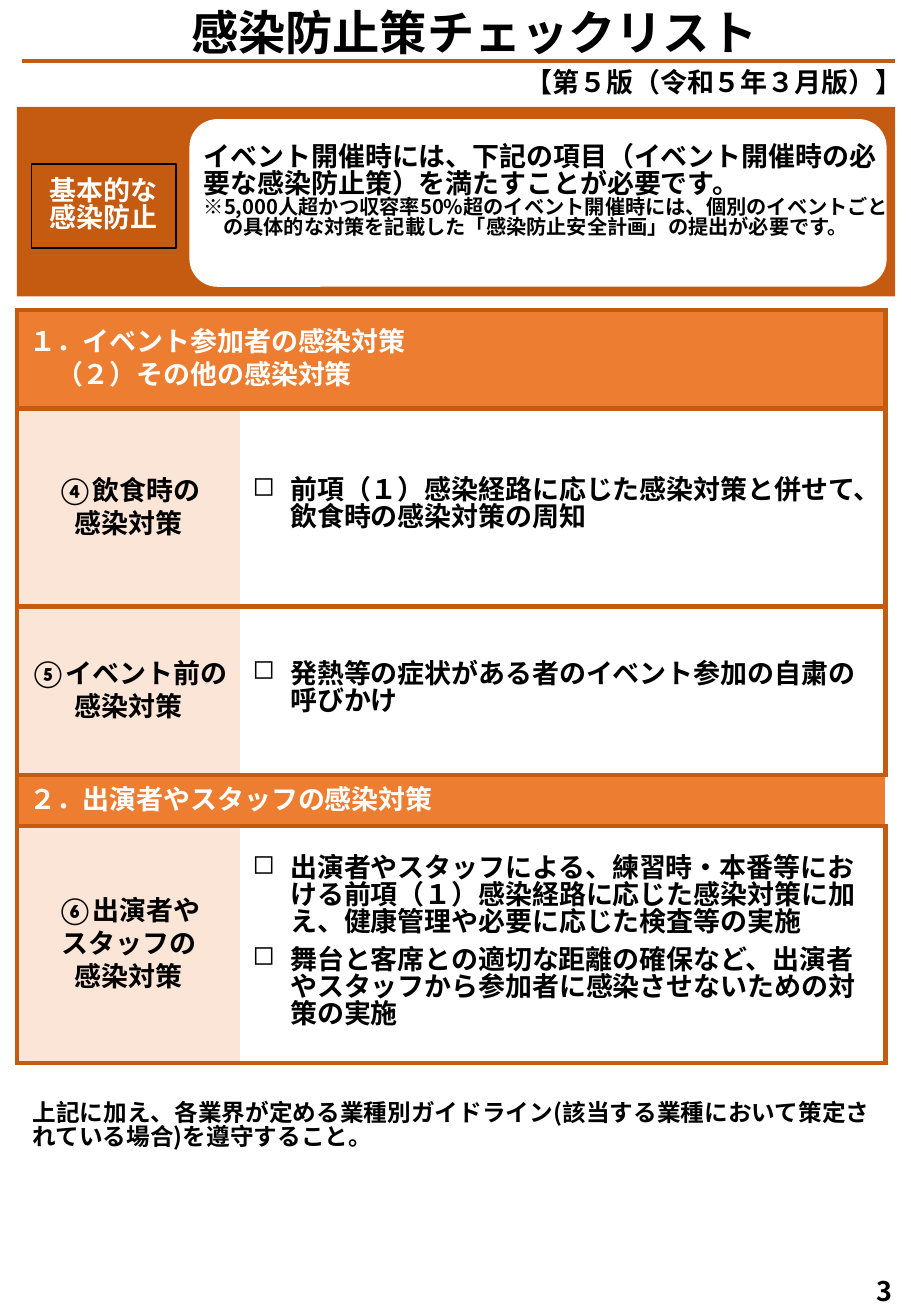
from dataclasses import dataclass

from lxml import etree
from pptx import Presentation
from pptx import util as u
from pptx.dml.color import RGBColor
from pptx.enum import shapes, text
from pptx.oxml import ns


@dataclass(frozen=True)
class Theme:
    rust: str = "C55A11"
    orange: str = "ED7D31"
    peach: str = "FBE5D6"
    white: str = "FFFFFF"
    black: str = "000000"
    font: str = "Noto Sans CJK JP"
    table_font: str = "Calibri"
    title: int = 28
    body: int = 16
    footer: int = 14
    note: int = 12
    border: int = 3
    tight: float = 0.82


THEME = Theme()
LEFT, CENTER = text.PP_ALIGN.LEFT, text.PP_ALIGN.CENTER
TOP, MIDDLE = text.MSO_ANCHOR.TOP, text.MSO_ANCHOR.MIDDLE
HEADING, MEASURE = "heading", "measure"

ROWS = [
    (0.81, HEADING, ["１．イベント参加者の感染対策", "　（２）その他の感染対策"], "LRTB"),
    (1.63, MEASURE, ["④飲食時の", "感染対策"],
     ["前項（１）感染経路に応じた感染対策と併せて、飲食時の感染対策の周知"]),
    (1.39, MEASURE, ["⑤イベント前の感染対策"],
     ["発熱等の症状がある者のイベント参加の自粛の呼びかけ"]),
    (0.42, HEADING, ["２．出演者やスタッフの感染対策"], "LTB"),
    (1.95, MEASURE, ["⑥出演者や", "スタッフの", "感染対策"],
     ["出演者やスタッフによる、練習時・本番等における前項（１）感染経路に応じた"
      "感染対策に加え、健康管理や必要に応じた検査等の実施",
      "舞台と客席との適切な距離の確保など、出演者やスタッフから参加者に"
      "感染させないための対策の実施"]),
]


def rgb(color):
    return RGBColor.from_string(color)


def inches(*lengths):
    return [u.Inches(length) for length in lengths]


def style(paragraph, size=THEME.body, color=THEME.black, font=THEME.font,
          align=LEFT, spacing=THEME.tight):
    paragraph.alignment = align
    paragraph.line_spacing = spacing
    paragraph.font.name = font
    paragraph.font.size = u.Pt(size)
    paragraph.font.bold = True
    paragraph.font.color.rgb = rgb(color)
    defaults = paragraph._p.pPr.find(ns.qn("a:defRPr"))
    etree.SubElement(defaults, ns.qn("a:ea"), typeface=font)


def write(frame, lines, **look):
    for index, line in enumerate(lines):
        paragraph = frame.add_paragraph() if index else frame.paragraphs[0]
        paragraph.text = line
        style(paragraph, **look)


def indent(paragraph, left, first, bullet=None):
    properties = paragraph._p.get_or_add_pPr()
    properties.set("marL", str(u.Inches(left)))
    properties.set("indent", str(u.Inches(first)))
    if bullet:
        mark = etree.Element(ns.qn("a:buChar"), char=bullet)
        properties.find(ns.qn("a:defRPr")).addprevious(mark)


def add_box(slide, kind, place, fill=None, line=None):
    shape = slide.shapes.add_shape(kind, *inches(*place))
    shape.shadow.inherit = False
    if fill:
        shape.fill.solid()
        shape.fill.fore_color.rgb = rgb(fill)
    else:
        shape.fill.background()
    if line:
        shape.line.color.rgb = rgb(line)
        shape.line.width = u.Pt(1)
    else:
        shape.line.fill.background()
    return shape


def add_text(slide, place, lines, anchor=TOP, **look):
    frame = slide.shapes.add_textbox(*inches(*place)).text_frame
    frame.word_wrap = True
    frame.vertical_anchor = anchor
    write(frame, lines, **look)
    return frame


def add_rule(slide, left, right, top):
    rule = slide.shapes.add_connector(
        shapes.MSO_CONNECTOR.STRAIGHT, *inches(left, top, right, top))
    rule.line.color.rgb = rgb(THEME.rust)
    rule.line.width = u.Pt(2.25)
    etree.SubElement(rule._element.spPr, ns.qn("a:effectLst"))


def format_cell(cell, fill, sides):
    cell.vertical_anchor = MIDDLE
    properties = cell._tc.get_or_add_tcPr()
    for side in "LRTB":
        edge = etree.SubElement(properties, ns.qn(f"a:ln{side}"))
        if side in sides:
            edge.set("w", str(u.Pt(THEME.border)))
            paint = etree.SubElement(edge, ns.qn("a:solidFill"))
            etree.SubElement(paint, ns.qn("a:srgbClr"), val=THEME.rust)
        else:
            etree.SubElement(edge, ns.qn("a:noFill"))
    cell.fill.solid()
    cell.fill.fore_color.rgb = rgb(fill)


def add_heading_row(first, second, lines, sides):
    first.merge(second)
    for cell in (first, second):
        format_cell(cell, THEME.orange, sides)
    write(first.text_frame, lines, color=THEME.white, font=THEME.table_font,
          spacing=1.0)


def add_measure_row(label, body, label_lines, checks):
    format_cell(label, THEME.peach, "LTB")
    write(label.text_frame, label_lines, font=THEME.table_font, align=CENTER,
          spacing=1.0)
    format_cell(body, THEME.white, "RTB")
    write(body.text_frame, checks, spacing=u.Pt(16))
    for paragraph in body.text_frame.paragraphs:
        paragraph.space_after = u.Pt(6)
        indent(paragraph, 0.31, -0.31, "◻")


def add_checklist(slide):
    height = sum(row[0] for row in ROWS)
    table = slide.shapes.add_table(
        len(ROWS), 2, *inches(0.14, 2.55, 7.15, height)).table
    table.first_row = table.horz_banding = False
    for column, width in zip(table.columns, inches(1.84, 5.31)):
        column.width = width
    builders = {HEADING: add_heading_row, MEASURE: add_measure_row}
    for index, (height, kind, lines, detail) in enumerate(ROWS):
        table.rows[index].height = u.Inches(height)
        builders[kind](table.cell(index, 0), table.cell(index, 1), lines, detail)


def add_banner(slide):
    kinds = shapes.MSO_SHAPE
    add_box(slide, kinds.RECTANGLE, (0.14, 0.88, 7.23, 1.56), THEME.rust)
    add_box(slide, kinds.ROUNDED_RECTANGLE, (1.56, 0.98, 5.74, 1.38), THEME.white)
    label = add_box(slide, kinds.RECTANGLE, (0.26, 1.35, 1.19, 0.69),
                    line=THEME.black).text_frame
    label.word_wrap = True
    label.vertical_anchor = MIDDLE
    label.margin_left = u.Inches(0.15)
    write(label, ["基本的な", "感染防止"], color=THEME.white)
    notice = add_text(slide, (1.58, 1.15, 5.84, 1.07), [
        "イベント開催時には、下記の項目（イベント開催時の必要な感染防止策）を"
        "満たすことが必要です。"])
    note = notice.add_paragraph()
    note.text = ("※5,000人超かつ収容率50%超のイベント開催時には、個別のイベントごとの"
                 "具体的な対策を記載した「感染防止安全計画」の提出が必要です。")
    style(note, size=THEME.note)
    indent(note, 0.16, -0.2)


def main():
    presentation = Presentation()
    presentation.slide_width, presentation.slide_height = inches(7.5, 10.83)
    slide = presentation.slides.add_slide(presentation.slide_layouts[6])
    add_checklist(slide)
    add_banner(slide)
    add_text(slide, (-0.23, 0.06, 8.27, 0.57), ["感染防止策チェックリスト"],
             size=THEME.title, align=CENTER)
    add_rule(slide, 0.18, 7.37, 0.5)
    add_text(slide, (6.99, 10.46, 0.59, 0.37), ["3"], MIDDLE, align=CENTER)
    add_text(slide, (4.13, 0.54, 3.5, 0.37), ["【第５版（令和５年３月版）】"],
             align=CENTER)
    add_text(slide, (0.17, 9.03, 7.16, 0.57), [
        "上記に加え、各業界が定める業種別ガイドライン(該当する業種において策定"
        "されている場合)を遵守すること。"], size=THEME.footer)
    presentation.save("out.pptx")


main()
